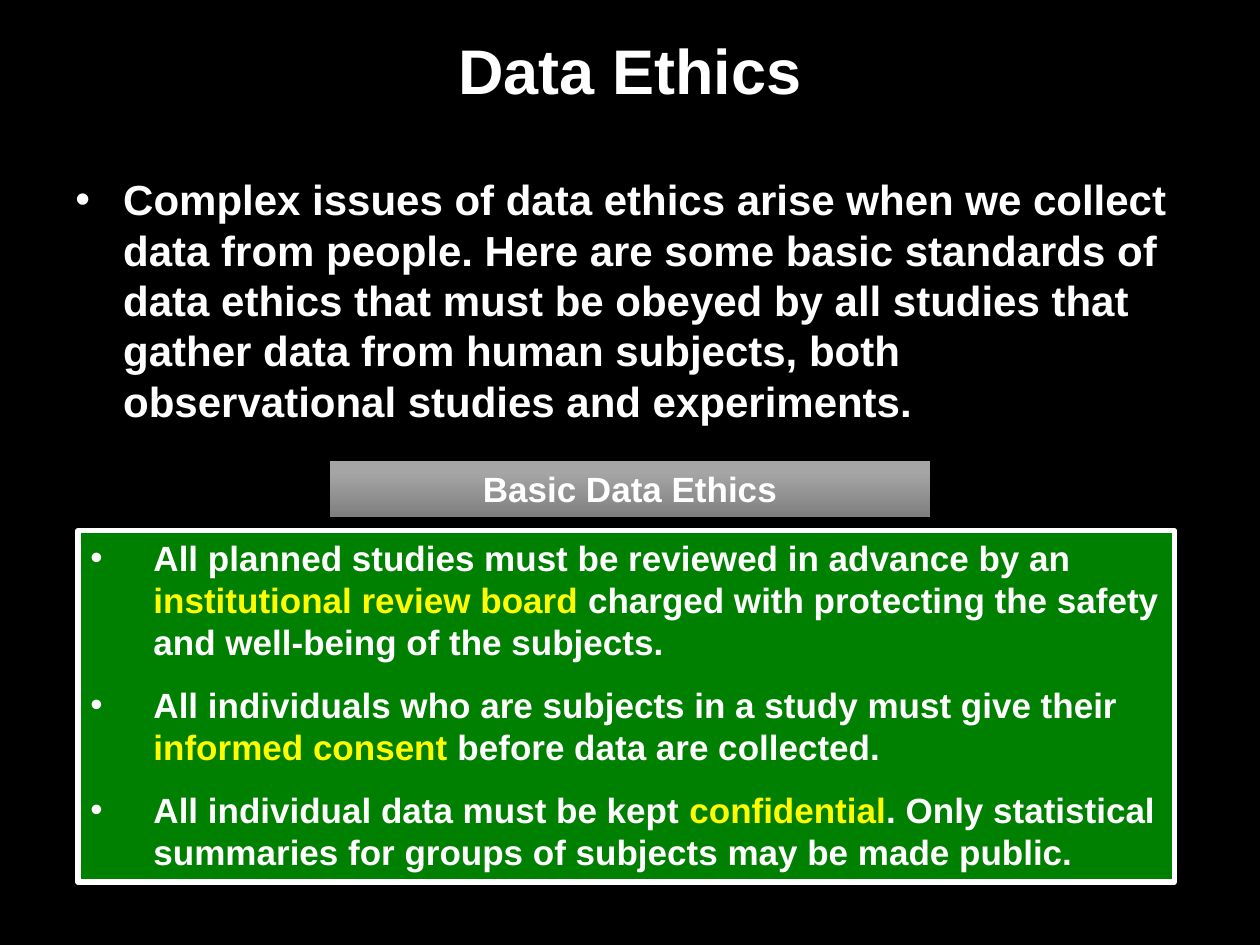
from lxml import etree
from pptx import Presentation
from pptx.dml.color import RGBColor
from pptx.enum.shapes import MSO_SHAPE
from pptx.enum.text import MSO_ANCHOR, MSO_AUTO_SIZE, PP_ALIGN
from pptx.oxml.ns import qn
from pptx.util import Inches, Pt

COLORS = {"back": "000000", "text": "FFFFFF", "key": "FFFF00",
          "panel": "008000", "dark": "7F7F7F", "light": "A5A5A5"}

TITLE = [("Data Ethics", "text")]
INTRO = [("Complex issues of data ethics arise when we collect data from people. "
          "Here are some basic standards of data ethics that must be obeyed by all "
          "studies that gather data from human subjects, both observational studies "
          "and experiments.", "text")]
LABEL = [("Basic Data Ethics", "text")]
RULES = [
    [("All planned studies must be reviewed in advance by an ", "text"),
     ("institutional review board ", "key"),
     ("charged with protecting the safety and well-being of the subjects.", "text")],
    [("All individuals who are subjects in a study must give their ", "text"),
     ("informed consent ", "key"),
     ("before data are collected.", "text")],
    [("All individual data must be kept ", "text"),
     ("confidential", "key"),
     (". Only statistical summaries for groups of subjects may be made public.", "text")],
]


def color(name):
    return RGBColor.from_string(COLORS[name])


def bullet(par, indent):
    """Give a paragraph a hanging bullet."""
    props = par._p.get_or_add_pPr()
    props.set("marL", str(Inches(indent)))
    props.set("indent", str(-Inches(indent)))
    etree.SubElement(props, qn("a:buFont")).set("typeface", "Arial")
    etree.SubElement(props, qn("a:buChar")).set("char", "•")


def write(shape, pars, size, indent=0, after=0, anchor=MSO_ANCHOR.TOP):
    """Fill a shape with bulleted text, or centred text if there is no indent."""
    frame = shape.text_frame
    frame.word_wrap = True
    frame.vertical_anchor = anchor
    for i, runs in enumerate(pars):
        par = frame.add_paragraph() if i else frame.paragraphs[0]
        par.alignment = PP_ALIGN.LEFT if indent else PP_ALIGN.CENTER
        par.space_after = Pt(after)
        if indent:
            bullet(par, indent)
        for words, tone in runs:
            run = par.add_run()
            run.text = words
            run.font.name = "Arial"
            run.font.size = Pt(size)
            run.font.bold = True
            run.font.color.rgb = color(tone)


def shade(shape, alpha, blur, dist):
    """Cast a soft black shadow straight down."""
    shape.shadow.inherit = False
    effects = shape._element.spPr.find(qn("a:effectLst"))
    outer = etree.SubElement(effects, qn("a:outerShdw"), blurRad=str(Pt(blur)),
                             dist=str(Pt(dist)), dir="5400000", rotWithShape="0")
    black = etree.SubElement(outer, qn("a:srgbClr"), val=COLORS["back"])
    etree.SubElement(black, qn("a:alpha"), val=str(alpha * 1000))


def place(add, *box):
    return add(*(Inches(n) for n in box))


def main():
    deck = Presentation()
    deck.slide_width, deck.slide_height = Inches(10), Inches(7.5)
    slide = deck.slides.add_slide(deck.slide_layouts[6])
    slide.background.fill.solid()
    slide.background.fill.fore_color.rgb = color("back")

    def rect(*box):
        return slide.shapes.add_shape(MSO_SHAPE.RECTANGLE, *box)

    title = place(slide.shapes.add_textbox, 0.5, 0.16, 9, 0.78)
    write(title, [TITLE], 36, anchor=MSO_ANCHOR.MIDDLE)
    intro = place(slide.shapes.add_textbox, 0.5, 1.33, 9, 2.25)
    write(intro, [INTRO], 24, indent=0.38)

    panel = place(rect, 0.62, 4.21, 8.7, 2.79)
    panel.fill.solid()
    panel.fill.fore_color.rgb = color("panel")
    panel.line.color.rgb = color("text")
    panel.line.width = Pt(3)
    shade(panel, 38, 3.1, 1.6)
    write(panel, RULES, 20, indent=0.5, after=12)

    label = place(rect, 2.62, 3.66, 4.76, 0.44)
    label.fill.gradient()
    label.fill.gradient_angle = 90
    for stop, (spot, tone) in zip(label.fill.gradient_stops,
                                  [(0, "dark"), (0.8, "light")]):
        stop.position = spot
        stop.color.rgb = color(tone)
    label.line.fill.background()
    shade(label, 35, 3.1, 1.8)
    write(label, [LABEL], 20)

    for shape in (panel, label):
        shape.text_frame.auto_size = MSO_AUTO_SIZE.SHAPE_TO_FIT_TEXT

    deck.save("out.pptx")


if __name__ == "__main__":
    main()
